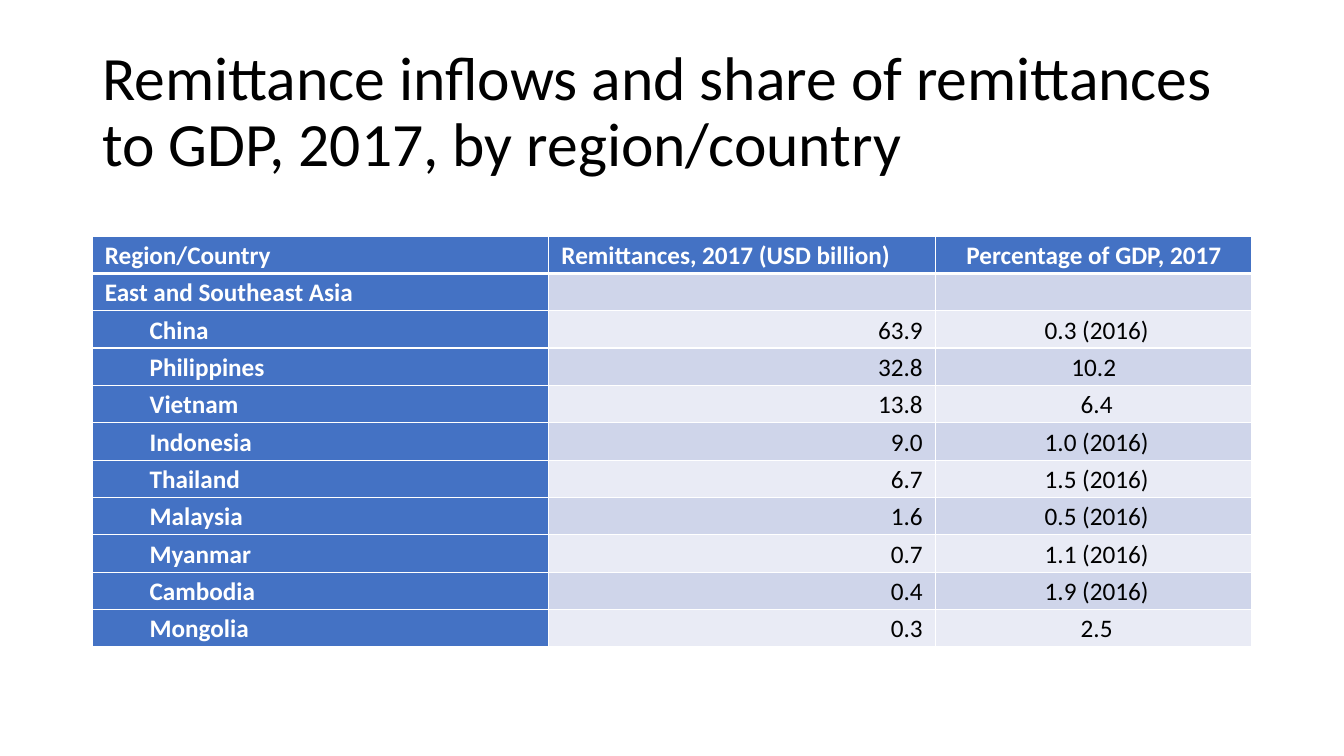
"""Builds a slide with a table of remittance inflows by country."""
from lxml import etree
from pptx import Presentation
from pptx import util as u
from pptx.dml.color import RGBColor
from pptx.enum import text
from pptx.oxml.ns import qn

TITLE = "Remittance inflows and share of remittances to GDP, 2017, by region/country"
HEADER = ("Region/Country", "Remittances, 2017 (USD billion)", "Percentage of GDP, 2017")
REGION = ("East and Southeast Asia", "", "")
COUNTRIES = [
    ("China", "63.9", " 0.3 (2016)"),
    ("Philippines", "32.8", "10.2"),
    ("Vietnam", "13.8", " 6.4"),
    ("Indonesia", "9.0", " 1.0 (2016)"),
    ("Thailand", "6.7", " 1.5 (2016)"),
    ("Malaysia", "1.6", " 0.5 (2016)"),
    ("Myanmar", "0.7", " 1.1 (2016)"),
    ("Cambodia", "0.4", " 1.9 (2016)"),
    ("Mongolia", "0.3", " 2.5"),
]
THEME = {
    "font": "Calibri", "title": 44, "body": 18,
    "ink": "000000", "paper": "FFFFFF", "accent": "4472C4",
    "bands": ("E9EBF5", "CFD5EA"),
}
SLIDE_SIZE = (960, 540)
TITLE_BOX = (66, 28.75, 828, 104.4)
TABLE_AT = (65.7, 168.6)
COLUMN_WIDTHS = (326.2, 276.4, 226.1)
ROW_HEIGHT = 26.7
CELL_INSET = 9.2
COUNTRY_INDENT = 32
LEFT, CENTER, RIGHT = text.PP_ALIGN.LEFT, text.PP_ALIGN.CENTER, text.PP_ALIGN.RIGHT


def write(frame, words, size=THEME["body"], color=THEME["ink"], bold=False,
          align=LEFT, spacing=1.07, indent=0):
    """Put formatted words into the first paragraph of a text frame."""
    para = frame.paragraphs[0]
    para.alignment = align
    para.line_spacing = spacing
    para.font.size = u.Pt(size)
    if indent:
        para._p.get_or_add_pPr().set("marL", str(u.Pt(indent)))
    if words:
        span = para.add_run()
        span.text = words
        span.font.name = THEME["font"]
        span.font.size = u.Pt(size)
        span.font.bold = bold
        span.font.color.rgb = RGBColor.from_string(color)


def add_borders(cell, widths):
    """Draw the left, right, top and bottom borders of a cell."""
    properties = cell._tc.get_or_add_tcPr()
    for side, width in zip("LRTB", widths):
        line = etree.SubElement(properties, qn(f"a:ln{side}"), w=str(u.Pt(width)))
        fill = etree.SubElement(line, qn("a:solidFill"))
        etree.SubElement(fill, qn("a:srgbClr"), val=THEME["paper"])


def add_title(page):
    """Add the slide title."""
    box = page.shapes.add_textbox(*map(u.Pt, TITLE_BOX))
    box.text_frame.word_wrap = True
    box.text_frame.vertical_anchor = text.MSO_ANCHOR.MIDDLE
    write(box.text_frame, TITLE, size=THEME["title"], spacing=0.9)


def add_remittances(page):
    """Add the table with its header row, label column and banded values."""
    rows = [HEADER, REGION, *COUNTRIES]
    size = (sum(COLUMN_WIDTHS), ROW_HEIGHT * len(rows))
    table = page.shapes.add_table(
        len(rows), len(HEADER), *map(u.Pt, TABLE_AT + size)).table
    for column, width in zip(table.columns, COLUMN_WIDTHS):
        column.width = u.Pt(width)
    for r, row in enumerate(rows):
        table.rows[r].height = u.Pt(ROW_HEIGHT)
        for c, words in enumerate(row):
            cell = table.cell(r, c)
            heading = r == 0 or c == 0
            cell.margin_left = cell.margin_right = u.Pt(CELL_INSET)
            cell.margin_top = cell.margin_bottom = 0
            cell.vertical_anchor = text.MSO_ANCHOR.MIDDLE
            add_borders(cell, (1, 1, 3 if r == 1 else 1, 3 if r == 0 else 1))
            cell.fill.solid()
            cell.fill.fore_color.rgb = RGBColor.from_string(
                THEME["accent"] if heading else THEME["bands"][r % 2])
            write(cell.text_frame, words, bold=heading,
                  color=THEME["paper"] if heading else THEME["ink"],
                  align=(LEFT, LEFT if r == 0 else RIGHT, CENTER)[c],
                  indent=COUNTRY_INDENT if c == 0 and r > 1 else 0)


def main():
    """Build and save the deck."""
    deck = Presentation()
    deck.slide_width, deck.slide_height = map(u.Pt, SLIDE_SIZE)
    page = deck.slides.add_slide(deck.slide_layouts[6])
    add_title(page)
    add_remittances(page)
    deck.save("out.pptx")


if __name__ == "__main__":
    main()
